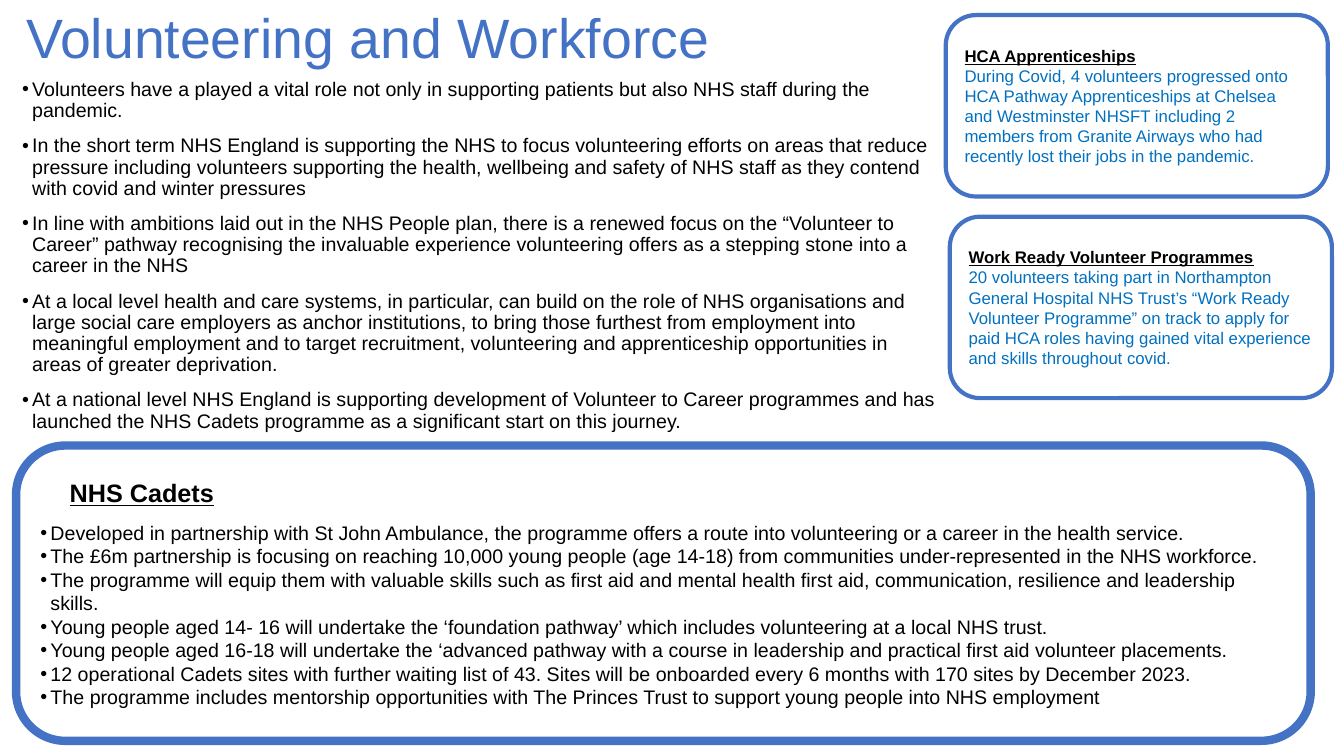
from dataclasses import dataclass

from pptx import Presentation
from pptx.dml.color import RGBColor
from pptx.enum.shapes import MSO_SHAPE
from pptx.enum.text import MSO_ANCHOR, MSO_AUTO_SIZE, PP_ALIGN
from pptx.oxml.ns import qn
from pptx.util import Inches, Pt
from lxml import etree

ROUND = MSO_SHAPE.ROUNDED_RECTANGLE
MIDDLE = MSO_ANCHOR.MIDDLE
FIXED = MSO_AUTO_SIZE.NONE
LEFT = PP_ALIGN.LEFT


@dataclass
class Theme:
    font: str = "Arial"
    blue: RGBColor = RGBColor(0x44, 0x72, 0xC4)
    note: RGBColor = RGBColor(0x00, 0x70, 0xC0)
    black: RGBColor = RGBColor(0, 0, 0)
    white: RGBColor = RGBColor(255, 255, 255)
    title: float = 39.6
    head: float = 18
    body: float = 14
    small: float = 12


class Page:
    def __init__(self, slide, theme):
        self.slide = slide
        self.theme = theme

    def style(self, para, size, color, bold=False):
        para.alignment = LEFT
        font = para.font
        font.name = self.theme.font
        font.size = Pt(size)
        font.color.rgb = color
        font.bold = bold
        font.underline = bold

    def bullet(self, para):
        props = para._p.get_or_add_pPr()
        props.set("marL", str(Inches(0.1)))
        props.set("indent", str(-Inches(0.1)))
        font = etree.SubElement(props, qn("a:buFont"))
        font.set("typeface", self.theme.font)
        mark = etree.SubElement(props, qn("a:buChar"))
        mark.set("char", "•")
        self.style(para, self.theme.body, self.theme.black)

    def title(self, text, box):
        shape = self.slide.shapes.title
        shape.left, shape.top, shape.width, shape.height = map(Inches, box)
        frame = shape.text_frame
        frame.auto_size = FIXED
        frame.vertical_anchor = MIDDLE
        para = frame.paragraphs[0]
        para.text = text
        para.line_spacing = 0.9
        self.style(para, self.theme.title, self.theme.blue)

    def points(self, items, box):
        frame = self.slide.shapes.add_textbox(*map(Inches, box)).text_frame
        frame.word_wrap = True
        for i, item in enumerate(items):
            para = frame.add_paragraph() if i else frame.paragraphs[0]
            para.text = item
            para.line_spacing = 0.9
            para.space_before = Pt(10 if i else 0)
            self.bullet(para)

    def panel(self, head, size, box, line):
        shape = self.slide.shapes.add_shape(ROUND, *map(Inches, box))
        shape.shadow.inherit = False
        shape.fill.solid()
        shape.fill.fore_color.rgb = self.theme.white
        shape.line.color.rgb = self.theme.blue
        shape.line.width = Pt(line)
        frame = shape.text_frame
        frame.word_wrap = True
        frame.vertical_anchor = MIDDLE
        para = frame.paragraphs[0]
        para.text = head
        self.style(para, size, self.theme.black, True)
        return frame

    def card(self, head, text, left, top):
        box = (left, top, 3.79, 1.8)
        frame = self.panel(head, self.theme.small, box, 3)
        para = frame.add_paragraph()
        para.text = text
        self.style(para, self.theme.small, self.theme.note)

    def group(self, head, items, box):
        frame = self.panel(head, self.theme.head, box, 6)
        first = frame.paragraphs[0]
        first._p.get_or_add_pPr().set("marL", str(Inches(0.29)))
        first.space_after = Pt(9.2)
        for item in items:
            para = frame.add_paragraph()
            para.text = item
            self.bullet(para)


ROLES = [
    "Volunteers have a played a vital role not only in supporting patients but also NHS staff during the pandemic.",
    "In the short term NHS England is supporting the NHS to focus volunteering efforts on areas that reduce "
    "pressure including volunteers supporting the health, wellbeing and safety of NHS staff as they contend "
    "with covid and winter pressures",
    "In line with ambitions laid out in the NHS People plan, there is a renewed focus on the “Volunteer to "
    "Career” pathway recognising the invaluable experience volunteering offers as a stepping stone into a "
    "career in the NHS",
    "At a local level health and care systems, in particular, can build on the role of NHS organisations and "
    "large social care employers as anchor institutions, to bring those furthest from employment into "
    "meaningful employment and to target recruitment, volunteering and apprenticeship opportunities in "
    "areas of greater deprivation.",
    "At a national level NHS England is supporting development of Volunteer to Career programmes and has "
    "launched the NHS Cadets programme as a significant start on this journey.",
]

CARDS = [
    ("Work Ready Volunteer Programmes",
     "20 volunteers taking part in Northampton General Hospital NHS Trust’s “Work Ready Volunteer Programme” "
     "on track to apply for paid HCA roles having gained vital experience and skills throughout covid.",
     9.42, 2.15),
    ("HCA Apprenticeships",
     "During Covid, 4 volunteers progressed onto HCA Pathway Apprenticeships at Chelsea and Westminster NHSFT "
     "including 2 members from Granite Airways who had recently lost their jobs in the pandemic.",
     9.38, 0.15),
]

CADETS = [
    "Developed in partnership with St John Ambulance, the programme offers a route into volunteering or a career "
    "in the health service.",
    "The £6m partnership is focusing on reaching 10,000 young people (age 14-18) from communities "
    "under-represented in the NHS workforce.",
    "The programme will equip them with valuable skills such as first aid and mental health first aid, "
    "communication, resilience and leadership skills.",
    "Young people aged 14- 16 will undertake the ‘foundation pathway’ which includes volunteering at a local "
    "NHS trust.",
    "Young people aged 16-18 will undertake the ‘advanced pathway with a course in leadership and practical "
    "first aid volunteer placements.",
    "12 operational Cadets sites with further waiting list of 43. Sites will be onboarded every 6 months with "
    "170 sites by December 2023.",
    "The programme includes mentorship opportunities with The Princes Trust to support young people into NHS "
    "employment",
]


def main():
    deck = Presentation()
    deck.slide_width = Inches(13.33)
    deck.slide_height = Inches(7.5)
    page = Page(deck.slides.add_slide(deck.slide_layouts[5]), Theme())
    page.title("Volunteering and Workforce", (0.16, 0.1, 12.52, 0.61))
    page.points(ROLES, (0.12, 0.74, 9.29, 5.82))
    for card in CARDS:
        page.card(*card)
    page.group("NHS Cadets", CADETS, (0.16, 4.42, 12.84, 2.93))
    deck.save("out.pptx")


if __name__ == "__main__":
    main()
